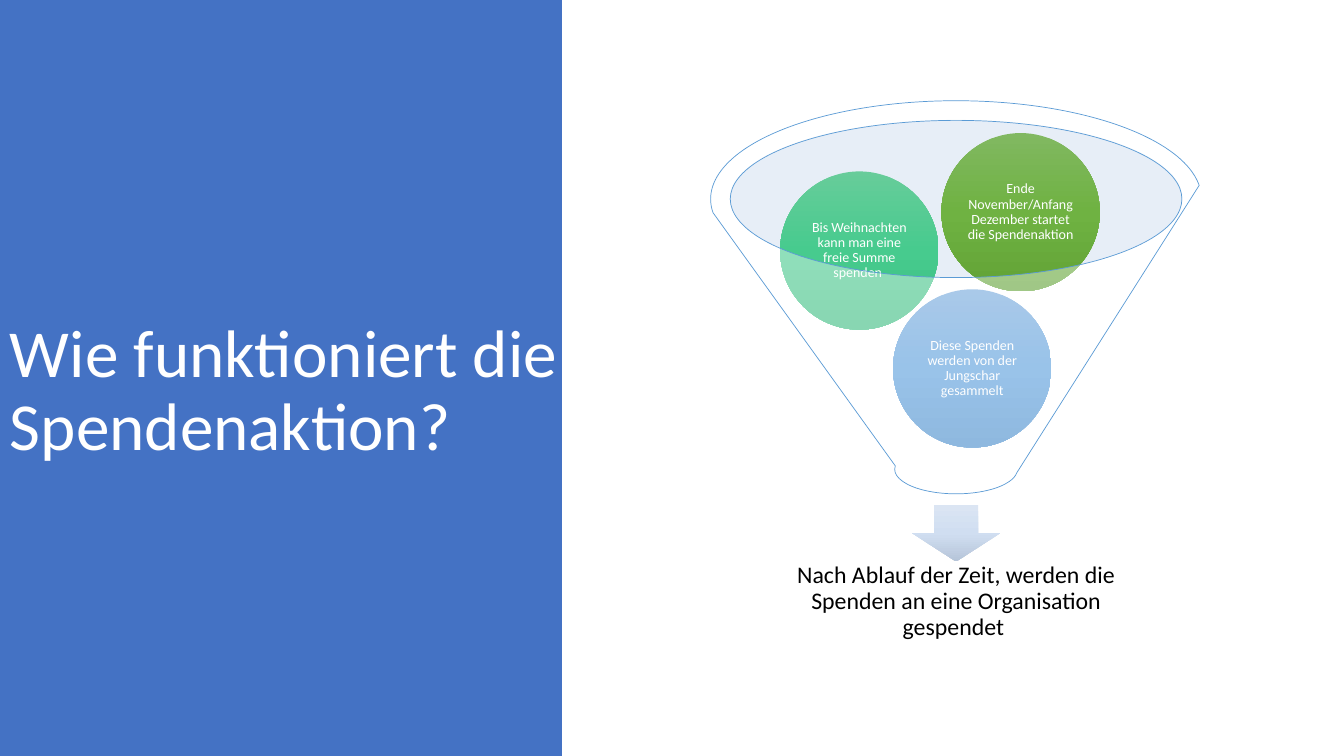
from lxml import etree
from pptx import Presentation
from pptx.dml.color import RGBColor
from pptx.enum.shapes import MSO_SHAPE
from pptx.enum.text import MSO_ANCHOR, PP_ALIGN
from pptx.oxml.ns import qn
from pptx.util import Emu, Inches, Pt

RECTANGLE, OVAL = MSO_SHAPE.RECTANGLE, MSO_SHAPE.OVAL
ARROW, FUNNEL = MSO_SHAPE.DOWN_ARROW, MSO_SHAPE.FUNNEL
LEFT, CENTER = PP_ALIGN.LEFT, PP_ALIGN.CENTER
MIDDLE = MSO_ANCHOR.MIDDLE

WIDTH, HEIGHT = Inches(13.33), Inches(7.5)
FUNNEL_AXIS = 71.14
BALL_SIZE = (11.78, 20.93)
BALLS = [
    ((66.45, 38.27), ("71A6DB", "559BDB", "448ACA"),
     "Diese Spenden werden von der Jungschar gesammelt"),
    ((58.05, 22.67), ("67CC9A", "47CB8E", "39BB7F"),
     "Bis Weihnachten kann man eine freie Summe spenden "),
    ((70.05, 17.6), ("81B861", "6FB242", "62A336"),
     "Ende November/Anfang Dezember startet die Spendenaktion"),
]


def color(value):
    """Turn a hex string into a colour."""
    return RGBColor.from_string(value)


def place(left, top, width, height):
    """Turn percentages of the slide's size into lengths."""
    return [Emu(round(share * side / 100)) for share, side in
            zip((left, top, width, height), (WIDTH, HEIGHT) * 2)]


def on_axis(top, width, height):
    """Give a box centred on the funnel's axis."""
    return FUNNEL_AXIS - width / 2, top, width, height


def add_figure(slide, kind, box, fill=None, alpha=None, line=None):
    """Add a preset shape with a solid, optionally translucent, fill."""
    shape = slide.shapes.add_shape(kind, *place(*box))
    shape.shadow.inherit = False
    if fill:
        shape.fill.solid()
        shape.fill.fore_color.rgb = color(fill)
    if alpha:
        fill_color = shape.element.spPr.find(qn("a:solidFill"))[0]
        etree.SubElement(fill_color, qn("a:alpha"), val=str(alpha * 1000))
    if line:
        shape.line.color.rgb = color(line)
        shape.line.width = Pt(0.5)
    else:
        shape.line.fill.background()
    return shape


def add_gradient(shape, colors):
    """Fill a shape from top to bottom with evenly spaced colours."""
    shape.fill.gradient()
    shape.fill.gradient_angle = 270
    stops = shape.element.spPr.find(qn("a:gradFill")).find(qn("a:gsLst"))
    stops.clear()
    for index, value in enumerate(colors):
        position = index * 100000 // (len(colors) - 1)
        stop = etree.SubElement(stops, qn("a:gs"), pos=str(position))
        etree.SubElement(stop, qn("a:srgbClr"), val=value)


def write(shape, text, size, fill="FFFFFF", align=CENTER, inset=(0.01, 0.01)):
    """Write one formatted paragraph into a shape."""
    frame = shape.text_frame
    frame.word_wrap = True
    frame.vertical_anchor = MIDDLE
    frame.margin_left = frame.margin_right = Inches(inset[0])
    frame.margin_top = frame.margin_bottom = Inches(inset[1])
    paragraph = frame.paragraphs[0]
    paragraph.alignment = align
    paragraph.line_spacing = 0.9
    run = paragraph.add_run()
    run.text = text
    run.font.name = "Calibri"
    run.font.size = Pt(size)
    run.font.color.rgb = color(fill)


def add_text(slide, box, text, **text_format):
    """Add a text box."""
    write(slide.shapes.add_textbox(*place(*box)), text, **text_format)


def add_ball(slide, corner, colors, text):
    """Add a labelled ball inside the funnel."""
    ball = add_figure(slide, OVAL, corner + BALL_SIZE)
    add_gradient(ball, colors)
    write(ball, text, size=10)


def main():
    """Build the slide and save it."""
    presentation = Presentation()
    presentation.slide_width, presentation.slide_height = WIDTH, HEIGHT
    slide = presentation.slides.add_slide(presentation.slide_layouts[6])

    add_figure(slide, RECTANGLE, (0, 0, 41.8, 100), fill="4472C4")
    add_text(slide, (0, 9.07, 47.6, 85.6), "Wie funktioniert die Spendenaktion?",
             size=48, align=LEFT, inset=(0.1, 0.05))

    add_figure(slide, OVAL, on_axis(15.87, 33.68, 20.8), fill="C4D5EB", alpha=40)
    arrow = add_figure(slide, ARROW, on_axis(66.8, 6.53, 7.47))
    add_gradient(arrow, ("DBE5F3", "D0DEF1", "B6C5D9"))
    add_text(slide, on_axis(72.67, 31.28, 13.87),
             "Nach Ablauf der Zeit, werden die Spenden an eine Organisation gespendet ",
             size=17, fill="000000", inset=(0.13, 0.13))
    for corner, colors, text in BALLS:
        add_ball(slide, corner, colors, text)
    add_figure(slide, FUNNEL, on_axis(13.33, 36.53, 52),
               fill="FFFFFF", alpha=40, line="5B9BD5")

    presentation.save("out.pptx")


if __name__ == "__main__":
    main()
